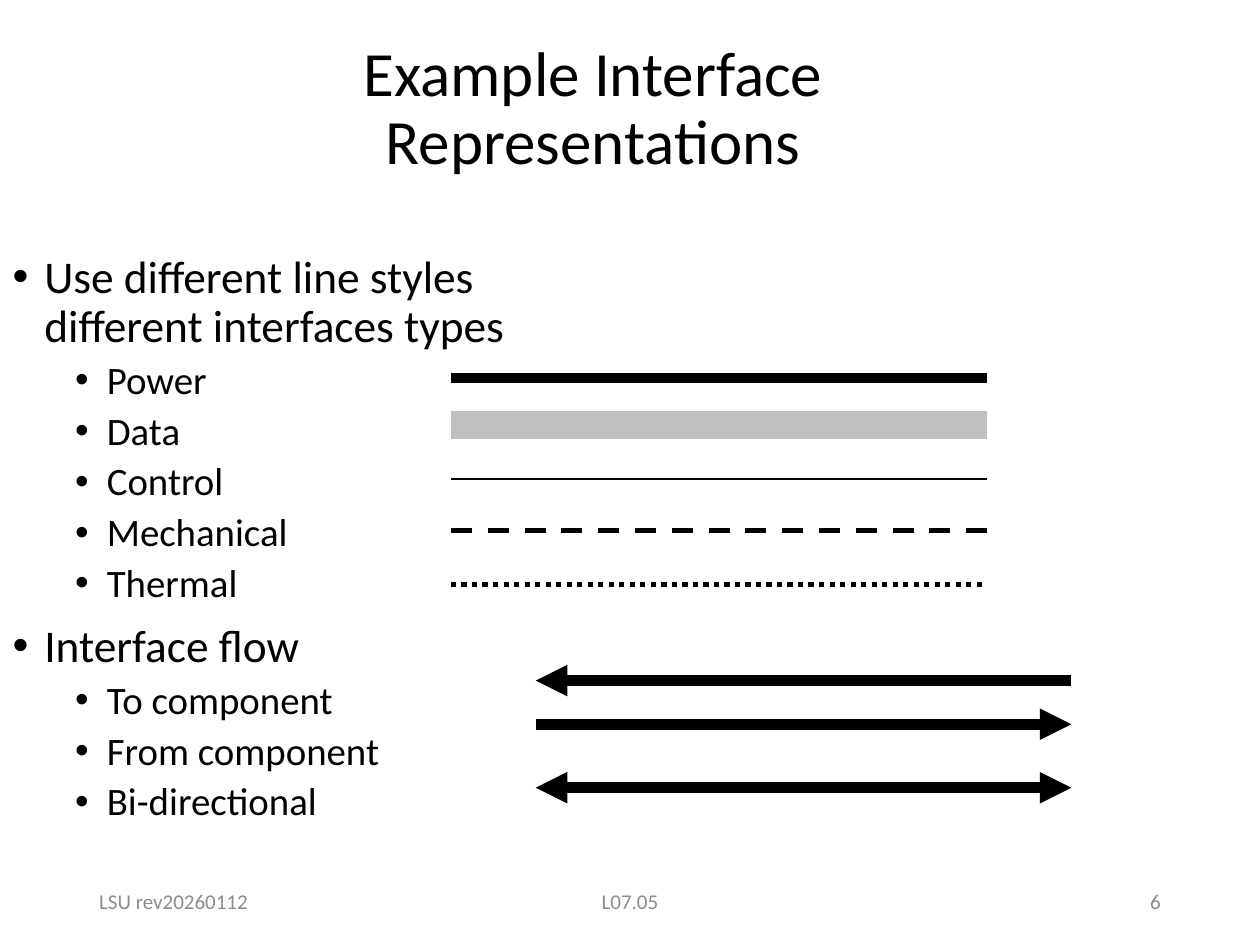
from lxml import etree
from pptx import Presentation
from pptx import util as u
from pptx.dml.color import RGBColor
from pptx.enum import dml, shapes, text
from pptx.oxml.ns import qn

BLACK = RGBColor(0x00, 0x00, 0x00)
SILVER = RGBColor(0xC0, 0xC0, 0xC0)
GRAY = RGBColor(0x8C, 0x8C, 0x8C)
FONT = "Calibri"

TOPICS = [
    ("Use different line styles different interfaces types",
     ["Power", "Data", "Control", "Mechanical", "Thermal"]),
    ("Interface flow",
     ["To component", "From component", "Bi-directional"]),
]
STYLE_LINES = [
    (7.62, BLACK, 6, None),
    (8.56, SILVER, 16, None),
    (9.65, BLACK, 1, None),
    (10.7, BLACK, 3, dml.MSO_LINE.DASH),
    (11.78, BLACK, 3, dml.MSO_LINE.ROUND_DOT),
]
FLOW_ARROWS = [
    (13.72, ["headEnd"]),
    (14.6, ["tailEnd"]),
    (15.88, ["headEnd", "tailEnd"]),
]
FOOTERS = [
    (1.75, 5.72, "LSU rev20260112", text.PP_ALIGN.LEFT),
    (8.41, 8.58, "L07.05", text.PP_ALIGN.CENTER),
    (17.93, 5.72, "6", text.PP_ALIGN.RIGHT),
]


def place(shape, left, top, width, height):
    """Move and resize a shape, with lengths in centimetres."""
    shape.left, shape.top = u.Cm(left), u.Cm(top)
    shape.width, shape.height = u.Cm(width), u.Cm(height)


def format_runs(paragraph, size, color):
    """Set font, size and colour on every run of a paragraph."""
    for run in paragraph.runs:
        run.font.name = FONT
        run.font.size = u.Pt(size)
        run.font.color.rgb = color


def add_title(slide, title):
    """Fill the title placeholder."""
    shape = slide.shapes.title
    place(shape, 3.38, 0.74, 17.15, 2.97)
    frame = shape.text_frame
    frame.text = title
    frame.auto_size = text.MSO_AUTO_SIZE.NONE
    frame.vertical_anchor = text.MSO_ANCHOR.MIDDLE
    paragraph = frame.paragraphs[0]
    paragraph.alignment = text.PP_ALIGN.CENTER
    paragraph.line_spacing = 0.9
    format_runs(paragraph, 36, BLACK)


def format_bullet(paragraph, level, is_first):
    """Give a list paragraph its bullet, indent, spacing and font."""
    paragraph.level = level
    properties = paragraph._p.get_or_add_pPr()
    properties.set("marL", str(u.Cm((0.64, 1.9)[level])))
    properties.set("indent", str(u.Cm(-0.64)))
    etree.SubElement(properties, qn("a:buFont")).set("typeface", "Arial")
    etree.SubElement(properties, qn("a:buChar")).set("char", "•")
    paragraph.line_spacing = 0.9
    paragraph.space_before = u.Pt(0 if is_first else (10, 5)[level])
    format_runs(paragraph, (25.9, 22.2)[level], BLACK)


def add_topics(slide, topics):
    """Fill the body placeholder with the two-level list."""
    shape = slide.placeholders[1]
    place(shape, 0, 5, 10.59, 11.94)
    items = []
    for topic, details in topics:
        items.append((topic, 0))
        items.extend((detail, 1) for detail in details)
    frame = shape.text_frame
    frame.text = "\n".join(label for label, _ in items)
    frame.auto_size = text.MSO_AUTO_SIZE.NONE
    for index, (_, level) in enumerate(items):
        format_bullet(frame.paragraphs[index], level, index == 0)


def add_line(slide, left, top, color, weight, dash=None, ends=()):
    """Draw a horizontal line with optional dash and arrowheads."""
    connector = slide.shapes.add_connector(
        shapes.MSO_CONNECTOR.STRAIGHT,
        u.Cm(left), u.Cm(top), u.Cm(left + 10.8), u.Cm(top))
    connector.line.color.rgb = color
    connector.line.width = u.Pt(weight)
    if dash is not None:
        connector.line.dash_style = dash
    outline = connector.line._get_or_add_ln()
    for end in ends:
        etree.SubElement(outline, qn(f"a:{end}")).set("type", "triangle")
    etree.SubElement(connector._element.spPr, qn("a:effectLst"))


def add_footer(slide, left, width, label, alignment):
    """Add one grey footer text."""
    shape = slide.shapes.add_textbox(
        u.Cm(left), u.Cm(17.65), u.Cm(width), u.Cm(1.02))
    frame = shape.text_frame
    frame.word_wrap = True
    frame.vertical_anchor = text.MSO_ANCHOR.MIDDLE
    frame.text = label
    paragraph = frame.paragraphs[0]
    paragraph.alignment = alignment
    format_runs(paragraph, 12, GRAY)


def main():
    """Build and save the slide."""
    presentation = Presentation()
    presentation.slide_width = u.Cm(25.4)
    presentation.slide_height = u.Cm(19.05)
    slide = presentation.slides.add_slide(presentation.slide_layouts[1])
    for footer in FOOTERS:
        add_footer(slide, *footer)
    add_title(slide, "Example Interface Representations")
    add_topics(slide, TOPICS)
    for top, color, weight, dash in STYLE_LINES:
        add_line(slide, 9.09, top, color, weight, dash)
    for top, ends in FLOW_ARROWS:
        add_line(slide, 10.8, top, BLACK, 6, ends=ends)
    presentation.save("out.pptx")


if __name__ == "__main__":
    main()
